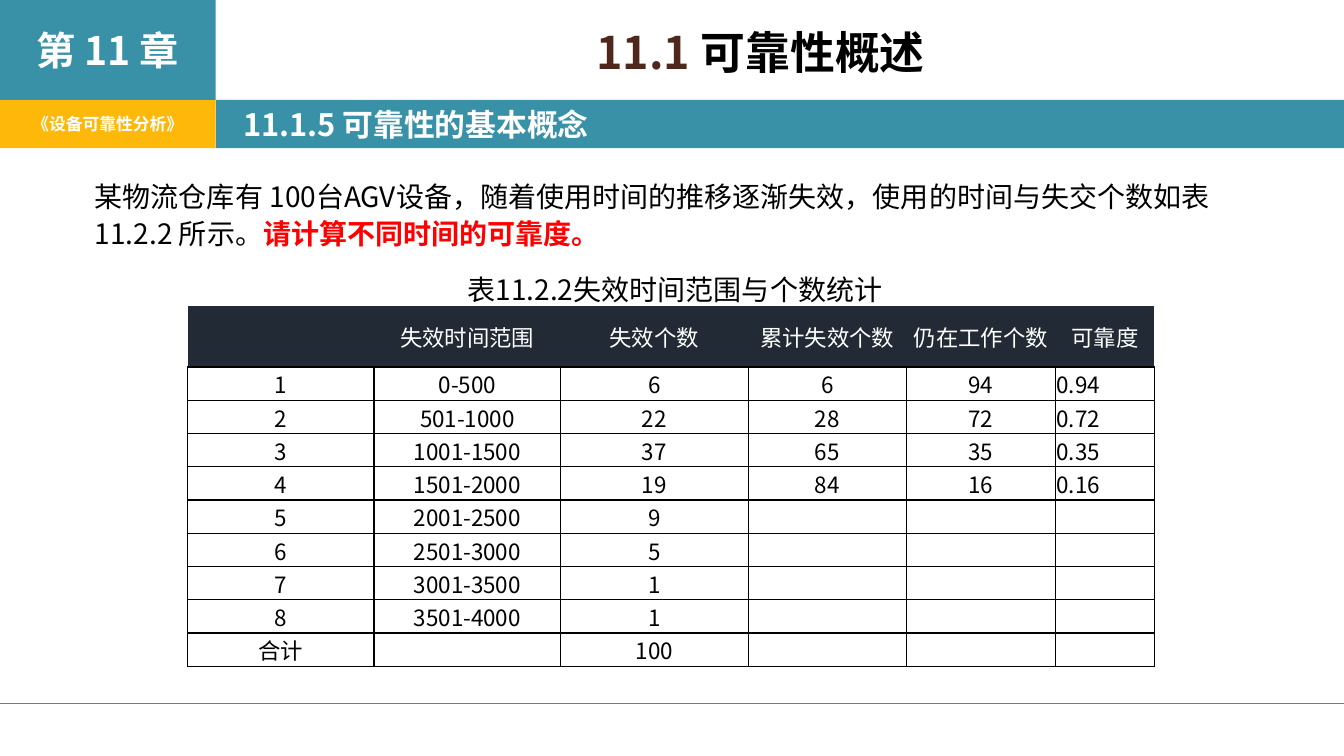
from dataclasses import dataclass

from lxml.etree import SubElement
from pptx import Presentation
from pptx.dml.color import RGBColor
from pptx.enum.shapes import MSO_CONNECTOR, MSO_SHAPE
from pptx.enum.text import MSO_ANCHOR, MSO_AUTO_SIZE, PP_ALIGN
from pptx.oxml.ns import qn
from pptx.util import Inches, Pt

# Content
CHAPTER = "第 11 章"
COURSE = "《设备可靠性分析》"
SECTION = "11.1.5 可靠性的基本概念"
TITLE_NUMBER, TITLE_NAME = "11.1 ", "可靠性概述"
PROBLEM = "某物流仓库有 100台AGV设备，随着使用时间的推移逐渐失效，使用的时间与失交个数如表 11.2.2 所示。"
QUESTION = "请计算不同时间的可靠度。"
CAPTION = "表11.2.2失效时间范围与个数统计"
HEADINGS = ("", "失效时间范围", "失效个数", "累计失效个数", "仍在工作个数", "可靠度")
RECORDS = [
    ("1", "0-500", "6", "6", "94", "0.94"),
    ("2", "501-1000", "22", "28", "72", "0.72"),
    ("3", "1001-1500", "37", "65", "35", "0.35"),
    ("4", "1501-2000", "19", "84", "16", "0.16"),
    ("5", "2001-2500", "9", "", "", ""),
    ("6", "2501-3000", "5", "", "", ""),
    ("7", "3001-3500", "1", "", "", ""),
    ("8", "3501-4000", "1", "", "", ""),
    ("合计", "", "100", "", "", ""),
]


@dataclass(frozen=True)
class Theme:
    face: str = "Noto Sans CJK SC"
    teal: str = "3891A7"
    amber: str = "FEB80A"
    brown: str = "4F271C"
    navy: str = "222B35"
    red: str = "FF0000"
    black: str = "000000"
    white: str = "FFFFFF"
    title: int = 32
    chapter: int = 28
    section: int = 22
    body: int = 20
    cell: int = 16
    label: int = 12


THEME = Theme()

# Layout in inches
WIDTH, HEIGHT = 13.33, 7.5
SIDE = 2.14
BAND_TOP, BAND_HEIGHT = 0.99, 0.48
FOOTER_TOP = 0.93 * HEIGHT
COLUMNS = (1.85, 1.85, 1.86, 1.57, 1.48, 0.98)
HEADER_ROW, RECORD_ROW = 0.6, 0.33
TABLE_LEFT, TABLE_TOP = 1.86, 3.04


def inches(*lengths):
    return [Inches(length) for length in lengths]


def add_run(paragraph, text, size, color, bold=False):
    run = paragraph.add_run()
    run.text = text
    font = run.font
    font.size, font.bold = Pt(size), bold
    font.color.rgb = RGBColor.from_string(color)
    font.name = THEME.face
    SubElement(run._r.get_or_add_rPr(), qn("a:ea"), typeface=THEME.face)


def place(placeholder, *box):
    placeholder.left, placeholder.top, placeholder.width, placeholder.height = inches(*box)
    frame = placeholder.text_frame
    frame.word_wrap = True
    frame.auto_size = MSO_AUTO_SIZE.NONE
    frame.vertical_anchor = MSO_ANCHOR.TOP
    return frame.paragraphs[0]


def add_block(slide, box, color, text="", size=0, align=PP_ALIGN.CENTER, indent=0.1):
    block = slide.shapes.add_shape(MSO_SHAPE.RECTANGLE, *inches(*box))
    block.shadow.inherit = False
    block.fill.solid()
    block.fill.fore_color.rgb = RGBColor.from_string(color)
    block.line.fill.background()
    if text:
        frame = block.text_frame
        frame.word_wrap = True
        frame.vertical_anchor = MSO_ANCHOR.MIDDLE
        frame.margin_left = Inches(indent)
        frame.paragraphs[0].alignment = align
        add_run(frame.paragraphs[0], text, size, THEME.white, True)


def set_borders(cell, visible):
    properties = cell._tc.get_or_add_tcPr()
    for side in "LRTB":
        line = SubElement(properties, qn(f"a:ln{side}"), w=str(Pt(1)))
        if side in visible:
            fill = SubElement(line, qn("a:solidFill"))
            SubElement(fill, qn("a:srgbClr"), val=THEME.black)
        else:
            SubElement(line, qn("a:noFill"))


def fill_cell(cell, text, heading, align):
    cell.margin_left = cell.margin_right = cell.margin_top = Inches(0.01)
    cell.margin_bottom = 0
    cell.vertical_anchor = MSO_ANCHOR.MIDDLE
    set_borders(cell, "B" if heading else "LRTB")
    if heading:
        cell.fill.solid()
        cell.fill.fore_color.rgb = RGBColor.from_string(THEME.navy)
    else:
        cell.fill.background()
    paragraph = cell.text_frame.paragraphs[0]
    paragraph.alignment = align
    if text:
        add_run(paragraph, text, THEME.cell, THEME.white if heading else THEME.black)
    else:
        SubElement(paragraph._p, qn("a:endParaRPr"), sz=str(THEME.cell * 100))


def add_statistics(slide):
    rows = [HEADINGS, *RECORDS]
    height = HEADER_ROW + RECORD_ROW * len(RECORDS)
    statistics = slide.shapes.add_table(
        len(rows), len(COLUMNS), *inches(TABLE_LEFT, TABLE_TOP, sum(COLUMNS), height)).table
    statistics.first_row = statistics.horz_banding = False
    for column, width in zip(statistics.columns, COLUMNS):
        column.width = Inches(width)
    for r, values in enumerate(rows):
        statistics.rows[r].height = Inches(RECORD_ROW if r else HEADER_ROW)
        for c, value in enumerate(values):
            reliability = r > 0 and c == len(COLUMNS) - 1
            align = PP_ALIGN.LEFT if reliability else PP_ALIGN.CENTER
            fill_cell(statistics.cell(r, c), value, r == 0, align)


def main():
    deck = Presentation()
    deck.slide_width, deck.slide_height = inches(WIDTH, HEIGHT)
    slide = deck.slides.add_slide(deck.slide_layouts[1])

    # Header bands
    add_block(slide, (SIDE, BAND_TOP, WIDTH - SIDE, BAND_HEIGHT), THEME.teal,
              SECTION, THEME.section, PP_ALIGN.LEFT, indent=0.27)
    add_block(slide, (0, BAND_TOP, SIDE, BAND_HEIGHT), THEME.amber, COURSE, THEME.label)
    add_block(slide, (0, 0, SIDE, BAND_TOP), THEME.teal, CHAPTER, THEME.chapter)

    # Footer rule
    footer = slide.shapes.add_connector(
        MSO_CONNECTOR.STRAIGHT, *inches(0, FOOTER_TOP, WIDTH, FOOTER_TOP))
    footer.line.color.rgb = RGBColor.from_string(THEME.teal)
    footer.line.width = Pt(0.79)
    SubElement(footer._element.spPr, qn("a:effectLst"))

    # Title
    title = place(slide.shapes.title, 2.31, 0.19, 10.47, 0.8)
    title.alignment = PP_ALIGN.CENTER
    add_run(title, TITLE_NUMBER, THEME.title, THEME.brown, True)
    add_run(title, TITLE_NAME, THEME.title, THEME.black, True)

    # Problem statement
    problem = place(slide.placeholders[1], 0.84, 1.7, 11.78, 0.84)
    problem.line_spacing = 1.1
    problem.space_before = Pt(0)
    properties = problem._p.get_or_add_pPr()
    properties.set("marL", "0")
    properties.set("indent", "0")
    SubElement(properties, qn("a:buNone"))
    add_run(problem, PROBLEM, THEME.body, THEME.black)
    add_run(problem, QUESTION, THEME.body, THEME.red, True)

    # Caption and table
    caption = slide.shapes.add_textbox(*inches(4.54, 2.65, 4.62, 0.44)).text_frame
    caption.word_wrap = True
    add_run(caption.paragraphs[0], CAPTION, THEME.body, THEME.black)
    add_statistics(slide)

    deck.save("out.pptx")


if __name__ == "__main__":
    main()
